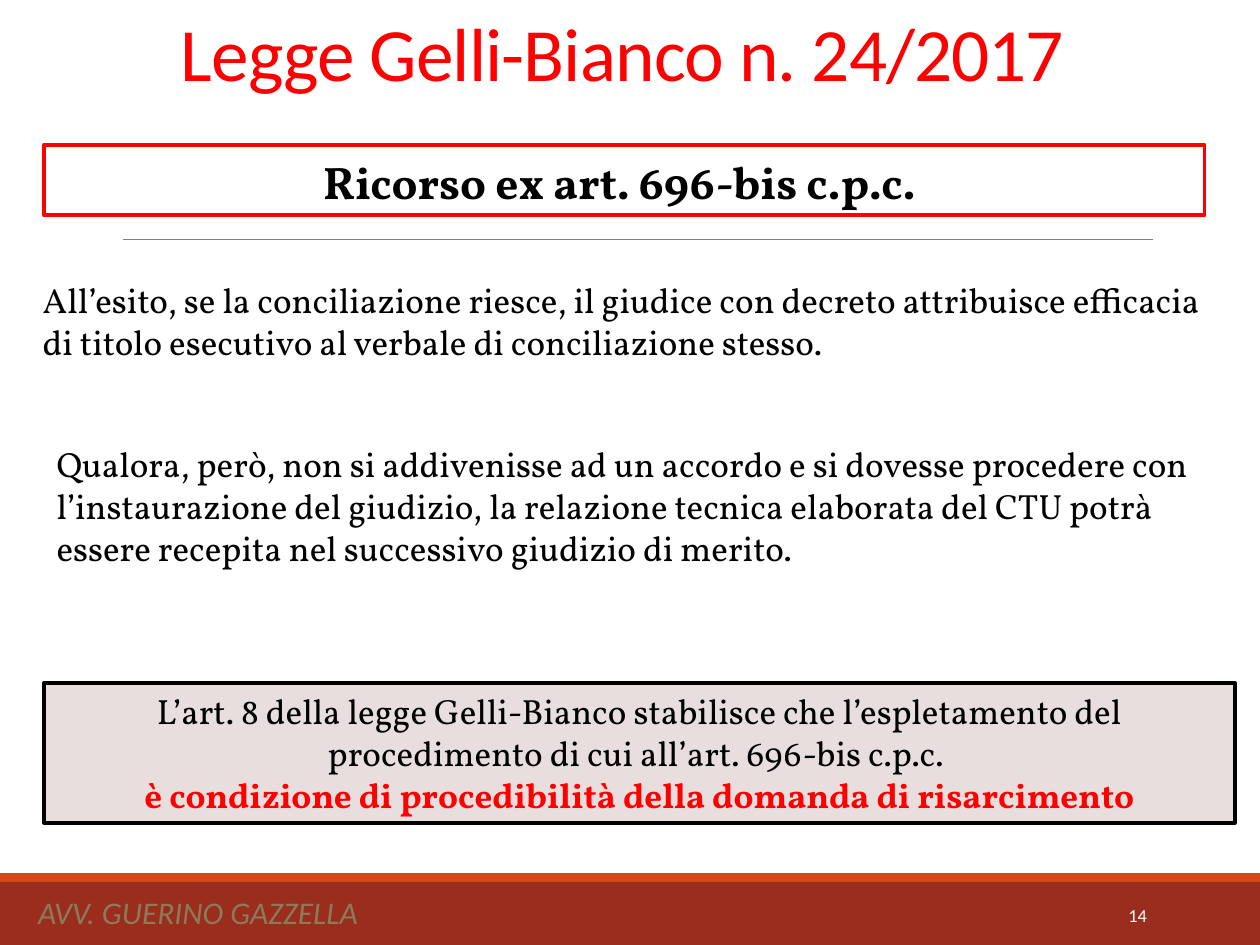
import pptx
import pptx.dml.color
import pptx.enum.shapes
import pptx.enum.text
import pptx.oxml
import pptx.oxml.ns
import pptx.util

Pt = pptx.util.Pt
RGBColor = pptx.dml.color.RGBColor
ALIGN = pptx.enum.text.PP_ALIGN
ANCHOR = pptx.enum.text.MSO_ANCHOR
AUTO_SIZE = pptx.enum.text.MSO_AUTO_SIZE
SHAPE = pptx.enum.shapes.MSO_SHAPE
CONNECTOR = pptx.enum.shapes.MSO_CONNECTOR
qn = pptx.oxml.ns.qn

RED = RGBColor(0xFF, 0x00, 0x00)
BLACK = RGBColor(0x00, 0x00, 0x00)
WHITE = RGBColor(0xFF, 0xFF, 0xFF)
BRICK = RGBColor(0x9B, 0x2D, 0x1F)
ORANGE = RGBColor(0xD3, 0x48, 0x17)
GREY = RGBColor(0x80, 0x80, 0x80)
TAUPE = RGBColor(0x8B, 0x7B, 0x57)
BLUSH = RGBColor(0xE8, 0xDE, 0xDE)

BODY_FONT = "Vollkorn"
LABEL_FONT = "Calibri"


def place(left, top, width, height):
    return Pt(left), Pt(top), Pt(width), Pt(height)


def write_run(paragraph, text, size, color, font=BODY_FONT, bold=False, italic=False):
    run = paragraph.add_run()
    run.text = text
    run.font.name = font
    run.font.size = Pt(size)
    run.font.color.rgb = color
    run.font.bold = bold
    run.font.italic = italic


def prepare_text(shape, align, anchor):
    frame = shape.text_frame
    frame.word_wrap = True
    frame.auto_size = AUTO_SIZE.NONE
    frame.vertical_anchor = anchor
    frame.paragraphs[0].alignment = align
    return frame


def add_title(slide, text):
    title = slide.shapes.title
    title.left, title.top, title.width, title.height = place(60.5, 15, 590.5, 44)
    paragraph = prepare_text(title, ALIGN.CENTER, ANCHOR.BOTTOM).paragraphs[0]
    paragraph.line_spacing = 0.85
    write_run(paragraph, text, 43, RED, LABEL_FONT)
    for properties in title.element.iter(qn("a:rPr")):
        properties.set("spc", "-50")


def add_panel(slide, bounds, fill=None, border=None):
    panel = slide.shapes.add_shape(SHAPE.RECTANGLE, *place(*bounds))
    panel.shadow.inherit = False
    if fill is None:
        panel.fill.background()
    else:
        panel.fill.solid()
        panel.fill.fore_color.rgb = fill
    if border is None:
        panel.line.fill.background()
    else:
        panel.line.color.rgb = border
        panel.line.width = Pt(2.25)
    return panel


def add_rule(slide, left, right, top):
    rule = slide.shapes.add_connector(
        CONNECTOR.STRAIGHT, Pt(left), Pt(top), Pt(right), Pt(top))
    rule.line.color.rgb = GREY
    rule.line.width = Pt(0.5)
    rule.element.spPr.append(pptx.oxml.parse_xml(
        '<a:effectLst xmlns:a="http://schemas.openxmlformats.org/drawingml/2006/main"/>'))


def add_text(slide, bounds, text, size=20, color=BLACK, font=BODY_FONT,
             align=ALIGN.LEFT, anchor=ANCHOR.TOP, italic=False):
    box = slide.shapes.add_textbox(*place(*bounds))
    frame = prepare_text(box, align, anchor)
    write_run(frame.paragraphs[0], text, size, color, font, italic=italic)


def main():
    deck = pptx.Presentation()
    deck.slide_width, deck.slide_height = Pt(720), Pt(540)
    slide = deck.slides.add_slide(deck.slide_layouts[5])

    add_panel(slide, (0, 504, 720, 36), BRICK)
    add_panel(slide, (0, 499, 720, 5), ORANGE)
    add_rule(slide, 70.5, 659, 136.8)
    add_title(slide, "Legge Gelli-Bianco n. 24/2017")

    add_text(slide, (-0.7, 502.5, 228, 37.5), "AVV. GUERINO GAZZELLA", 18, TAUPE,
             LABEL_FONT, ALIGN.CENTER, ANCHOR.MIDDLE, italic=True)
    add_text(slide, (584.5, 508.5, 78, 28.8), "14", 10.5, WHITE,
             LABEL_FONT, ALIGN.RIGHT, ANCHOR.MIDDLE)

    heading = add_panel(slide, (25.2, 82.8, 663.1, 40.3), border=RED)
    heading_line = prepare_text(heading, ALIGN.CENTER, ANCHOR.TOP).paragraphs[0]
    heading_line.line_spacing = 1.06
    write_run(heading_line, "Ricorso ex art. 696-bis c.p.c. ", 26, BLACK, bold=True)

    add_text(slide, (17.3, 155.5, 680.4, 55.4),
             "All’esito, se la conciliazione riesce, il giudice con decreto attribuisce "
             "efficacia di titolo esecutivo al verbale di conciliazione stesso.")
    add_text(slide, (25.2, 249.1, 680.4, 80),
             "Qualora, però, non si addivenisse ad un accordo e si dovesse procedere con "
             "l’instaurazione del giudizio, la relazione tecnica elaborata del CTU potrà "
             "essere recepita nel successivo giudizio di merito.")

    condition = add_panel(slide, (25.2, 390.2, 680.4, 80), BLUSH, BLACK)
    condition_text = prepare_text(condition, ALIGN.CENTER, ANCHOR.TOP)
    write_run(condition_text.paragraphs[0],
              "L’art. 8 della legge Gelli-Bianco stabilisce che l’espletamento del "
              "procedimento di cui all’art. 696-bis c.p.c. ", 20, BLACK)
    conclusion = condition_text.add_paragraph()
    conclusion.alignment = ALIGN.CENTER
    write_run(conclusion, "è condizione di procedibilità della domanda di risarcimento",
              20, RED, bold=True)

    deck.save("out.pptx")


if __name__ == "__main__":
    main()
